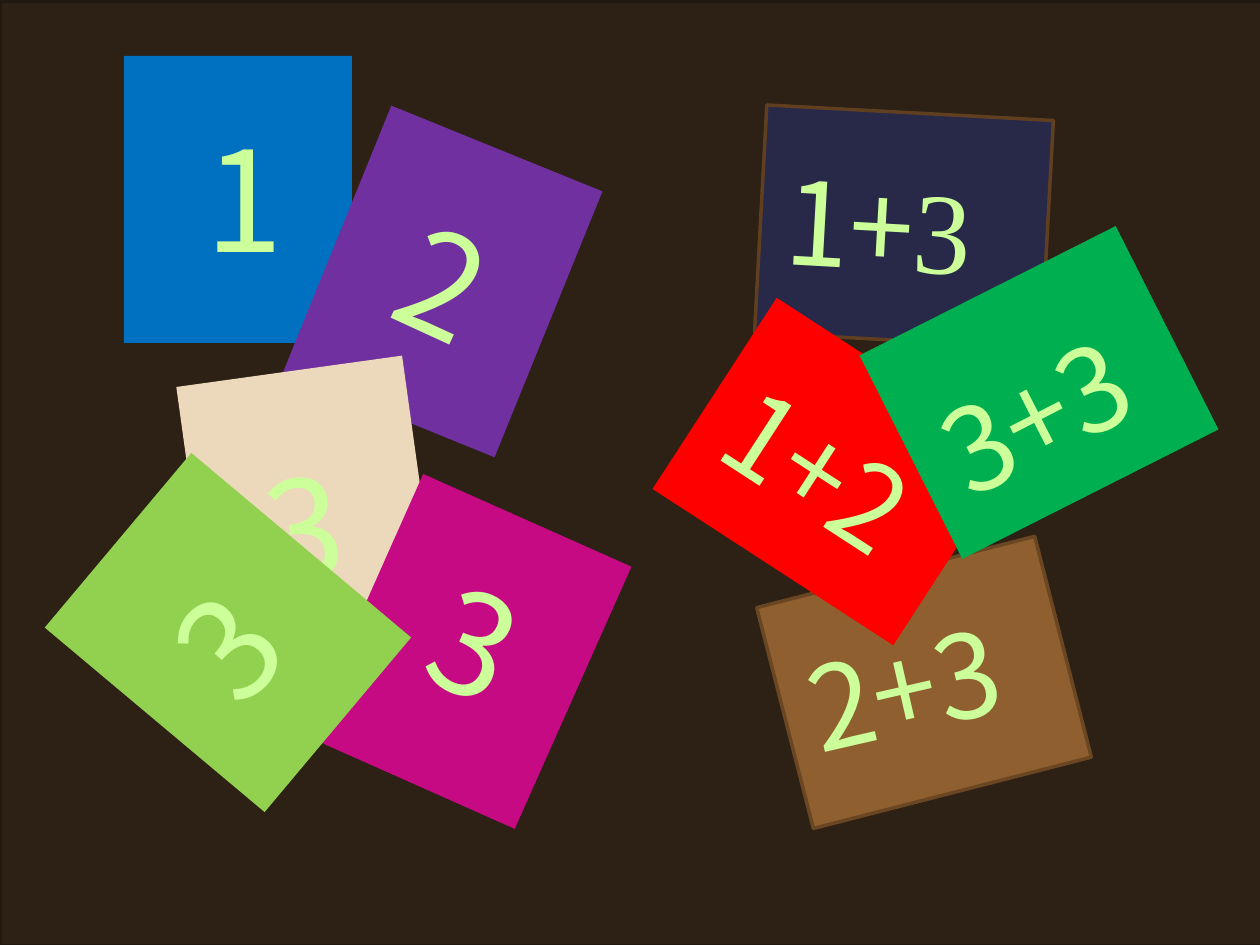
from dataclasses import dataclass
from typing import Any, Optional, Union

from pptx import Presentation
from pptx.dml.color import RGBColor
from pptx.enum.shapes import MSO_SHAPE
from pptx.enum.text import MSO_AUTO_SIZE
from pptx.util import Emu, Pt

RECTANGLE = MSO_SHAPE.RECTANGLE
GROW = MSO_AUTO_SIZE.SHAPE_TO_FIT_TEXT
EMU_PER_PX = 914400 / 126


@dataclass(frozen=True)
class Theme:
    backdrop: str = "2A2B4C"
    table: str = "2D2015"
    table_edge: str = "211810"
    blue: str = "0070C0"
    purple: str = "7030A0"
    beige: str = "ECD9BB"
    magenta: str = "C60A83"
    brown: str = "8F5F2F"
    brown_edge: str = "6A4623"
    navy: str = "282948"
    navy_edge: str = "5F3F1F"
    lime: str = "92D050"
    red: str = "FF0000"
    green: str = "00B050"
    number: str = "CCFF99"
    sans: str = "Noto Sans CJK JP"
    serif: str = "Times New Roman"
    digit_size: int = 80
    sum_size: int = 66
    edge_width: int = 2


THEME = Theme()


@dataclass(frozen=True)
class Card:
    left: int
    top: int
    rotation: float
    fill: str
    edge: Optional[str] = None
    width: int = 228
    height: int = 287


@dataclass(frozen=True)
class Label:
    text: str
    left: int
    top: int
    width: int
    rotation: float = 0
    serif_tail: str = ""
    size: int = THEME.digit_size
    height: int = 183


@dataclass(frozen=True)
class SumLabel(Label):
    size: int = THEME.sum_size
    height: int = 152


PILE: list[Union[Card, Label]] = [
    Card(0, 1, 0, THEME.table, THEME.table_edge, 1265, 945),
    Card(124, 56, 0, THEME.blue),
    Label("1", 193, 106, 139),
    Card(329, 138, 22.1, THEME.purple),
    Label("2", 393, 190, 100, 24.7),
    Card(195, 370, 352.1, THEME.beige),
    Card(355, 508, 24, THEME.magenta),
    Label("3", 253, 435, 108, 352.4),
    Label("3", 423, 552, 110, 23.6),
    Card(810, 539, 75.6, THEME.brown, THEME.brown_edge),
    Card(790, 83, 273.1, THEME.navy, THEME.navy_edge),
    Card(114, 489, 310, THEME.lime),
    Label("3", 174, 552, 110, 312),
    SumLabel("1+", 774, 150, 261, 3.2, "3"),
    SumLabel("2+3", 795, 607, 258, 347.1),
    Card(721, 328, 303, THEME.red),
    SumLabel("1+2", 706, 404, 257, 33),
    Card(925, 249, 63.2, THEME.green),
    SumLabel("3+3", 921, 316, 320, 332.9),
]


def px(length: int) -> Emu:
    return Emu(round(length * EMU_PER_PX))


def bounds(item: Union[Card, Label]) -> list[Emu]:
    return [px(v) for v in (item.left, item.top, item.width, item.height)]


def apply_format(target: Any, values: dict[str, Any]) -> None:
    for attribute, value in values.items():
        setattr(target, attribute, value)


def draw_card(slide: Any, card: Card) -> None:
    sheet = slide.shapes.add_shape(RECTANGLE, *bounds(card))
    sheet.rotation = card.rotation
    sheet.shadow.inherit = False
    sheet.fill.solid()
    sheet.fill.fore_color.rgb = RGBColor.from_string(card.fill)
    if card.edge:
        sheet.line.color.rgb = RGBColor.from_string(card.edge)
        sheet.line.width = Pt(THEME.edge_width)
    else:
        sheet.line.fill.background()


def draw_label(slide: Any, label: Label) -> None:
    box = slide.shapes.add_textbox(*bounds(label))
    box.rotation = label.rotation
    apply_format(box.text_frame, {"word_wrap": True, "auto_size": GROW})
    line = box.text_frame.paragraphs[0]
    for text, face in ((label.text, THEME.sans), (label.serif_tail, THEME.serif)):
        if text:
            number = line.add_run()
            number.text = text
            apply_format(number.font, {"name": face, "size": Pt(label.size)})
            number.font.color.rgb = RGBColor.from_string(THEME.number)


def main() -> None:
    deck = Presentation()
    apply_format(deck, {"slide_width": px(1260), "slide_height": px(945)})
    slide = deck.slides.add_slide(deck.slide_layouts[6])
    slide.background.fill.solid()
    slide.background.fill.fore_color.rgb = RGBColor.from_string(THEME.backdrop)
    for item in PILE:
        if isinstance(item, Card):
            draw_card(slide, item)
        else:
            draw_label(slide, item)
    deck.save("out.pptx")


if __name__ == "__main__":
    main()
